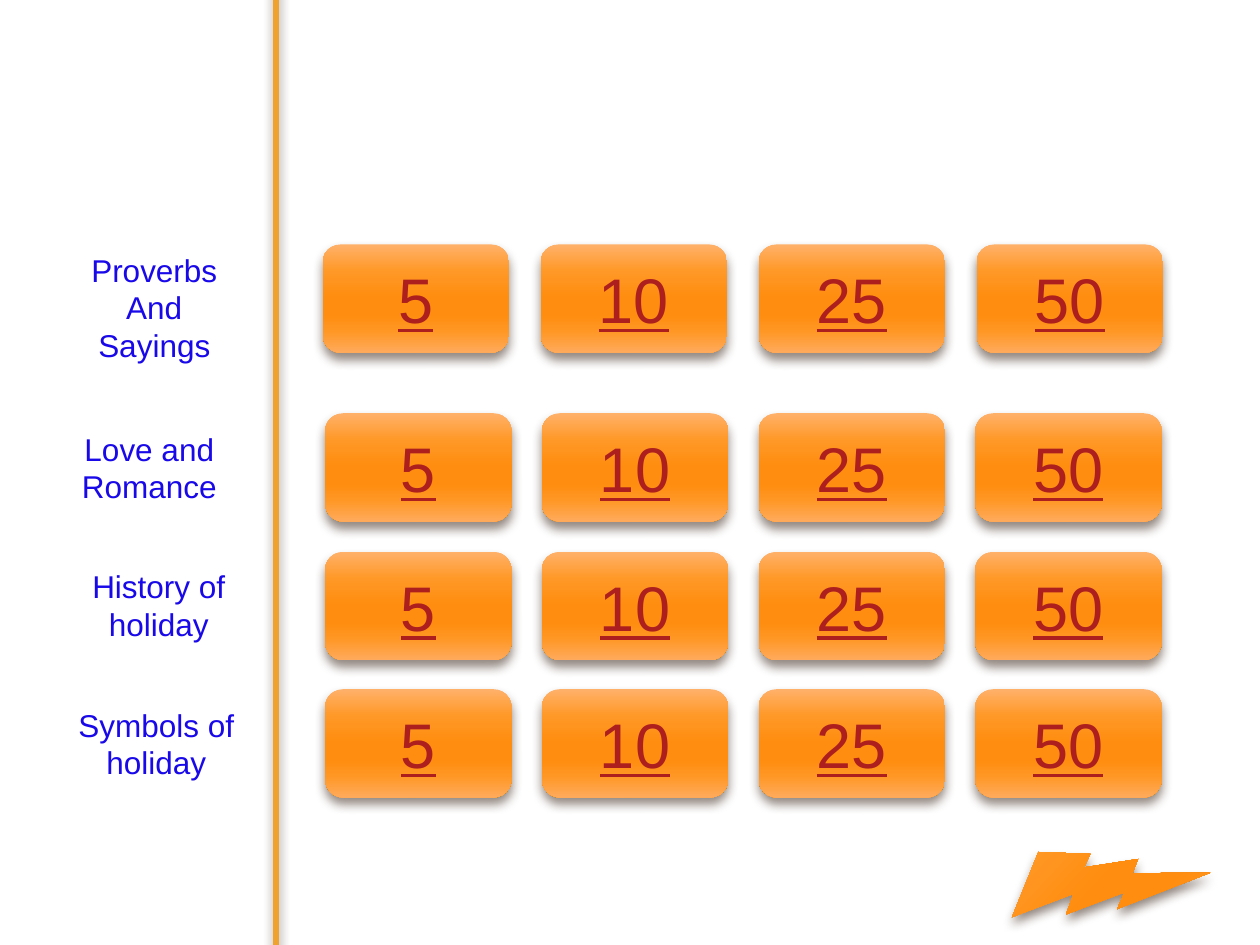
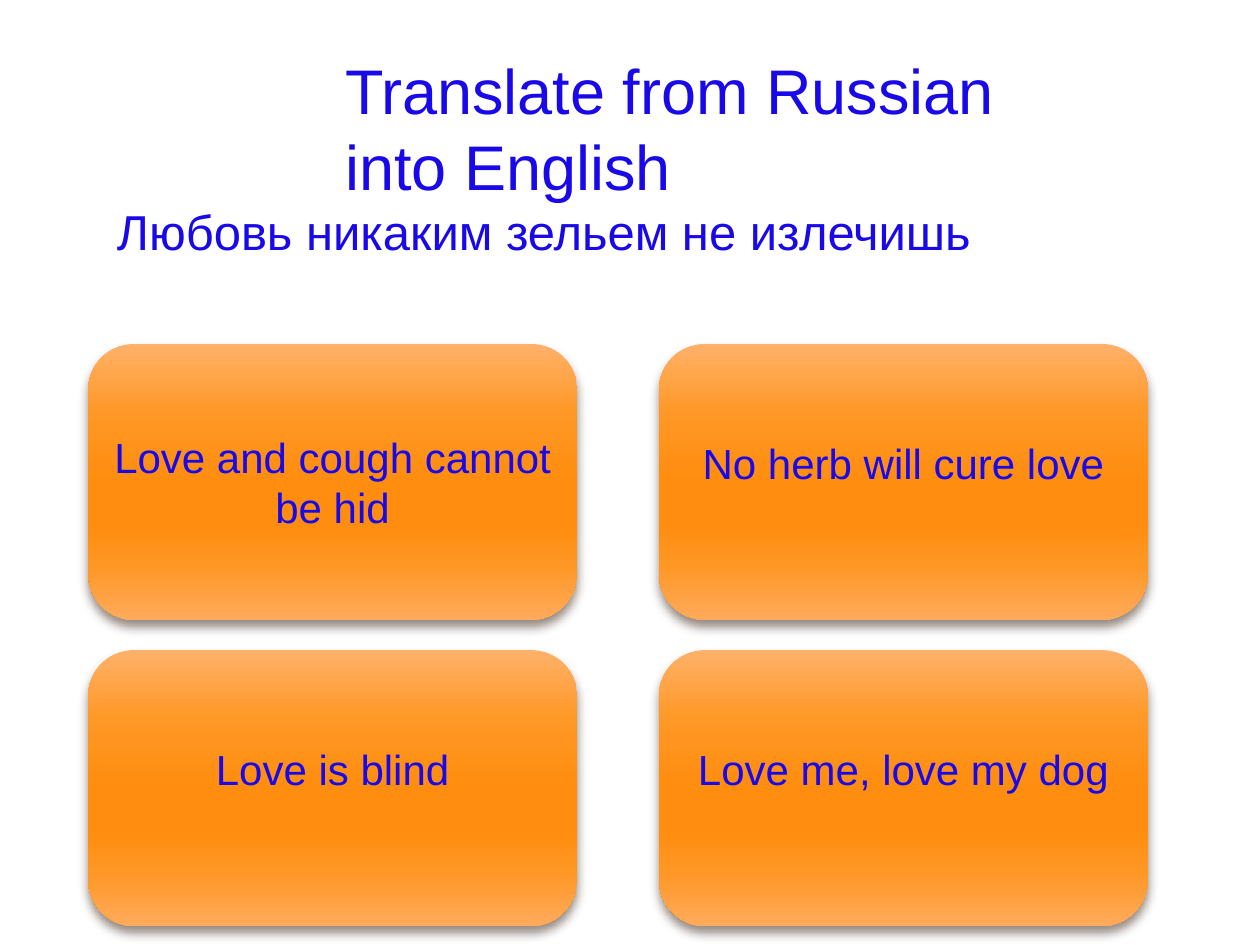
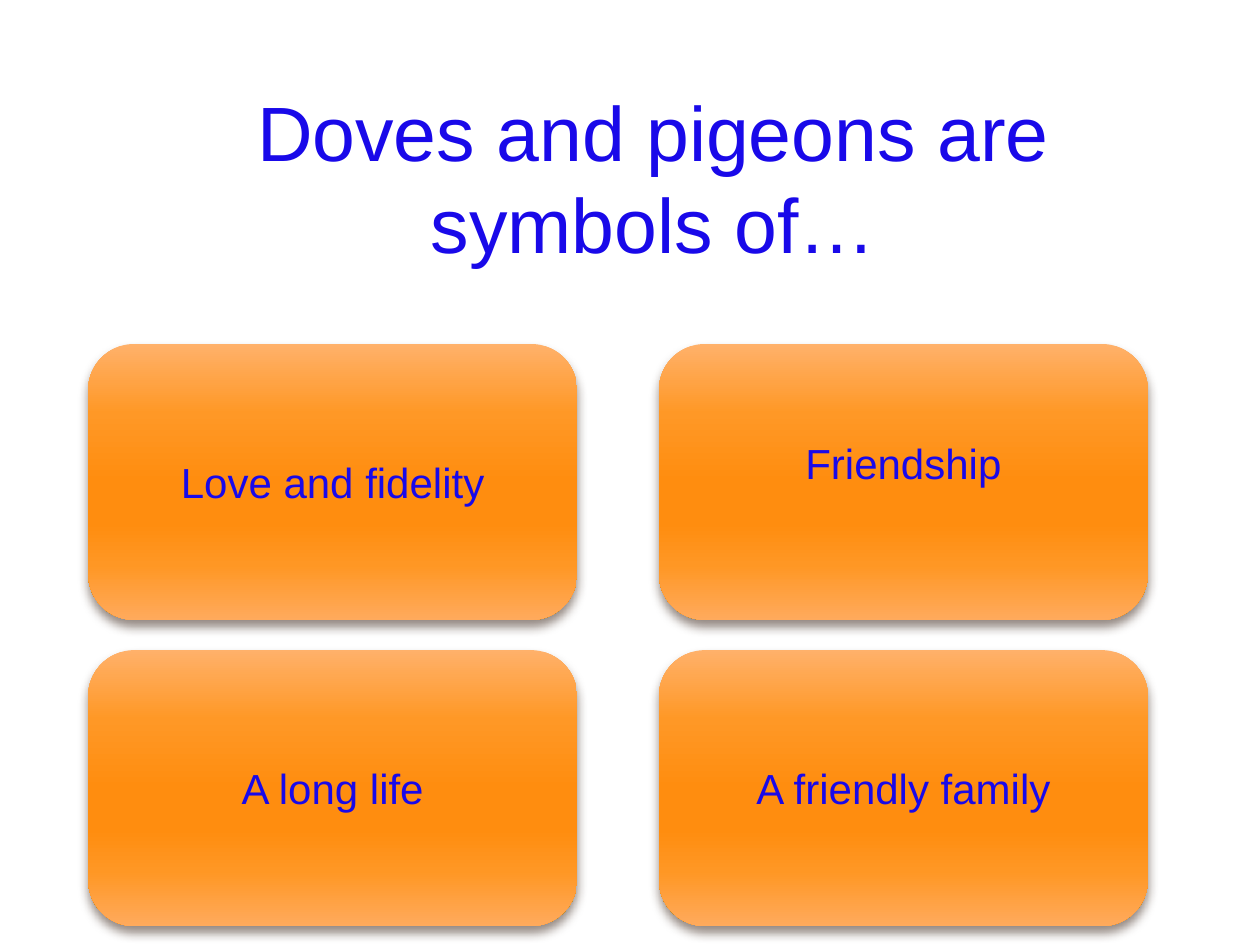
from dataclasses import dataclass

from lxml import etree
from pptx import Presentation
from pptx.dml.color import RGBColor
from pptx.enum.shapes import MSO_CONNECTOR, MSO_SHAPE
from pptx.enum.text import MSO_ANCHOR, MSO_AUTO_SIZE, PP_ALIGN
from pptx.oxml.ns import qn
from pptx.util import Inches, Pt

ROUND_RECT = MSO_SHAPE.ROUNDED_RECTANGLE
LIGHTNING = MSO_SHAPE.LIGHTNING_BOLT
STRAIGHT = MSO_CONNECTOR.STRAIGHT
TOP, MIDDLE = MSO_ANCHOR.TOP, MSO_ANCHOR.MIDDLE
LEFT, CENTER = PP_ALIGN.LEFT, PP_ALIGN.CENTER
NO_AUTOFIT = MSO_AUTO_SIZE.NONE

FONT = "Arial"
BLUE, RED, AMBER, SHADOW = "1909E9", "AD1F1F", "F0A22E", "4E3B30"
GLOSS = [(0, "FFB16A"), (25, "FF9826"), (50, "FF8D0F"),
         (65, "FF8D0F"), (80, "FF9724"), (100, "FFAA5C")]
TITLE_ONLY, BLANK = 5, 6

POINTS = ["5", "10", "25", "50"]
BUTTON_W, BUTTON_H = 1.48, 0.86
CARD_W, CARD_H = 3.88, 2.19
CARD_LEFT, CARD_TOP = 0.7, 2.73
CARD_STEP_X, CARD_STEP_Y = 4.53, 2.43
LINE_BELOW = 0.3  # height of one 18 pt line


@dataclass
class Box:
    left: float
    top: float
    width: float
    height: float

    def lengths(self) -> list:
        return [Inches(v) for v in (self.left, self.top, self.width, self.height)]


@dataclass
class Category:
    lines: str
    label: Box
    first_button: float
    button_top: float
    step: float = 1.72


@dataclass
class Answer:
    text: str
    raised: bool = False


CATEGORIES = [
    Category("Proverbs\nAnd\nSayings", Box(0.51, 1.94, 1.43, 1.01), 2.56, 1.94, 1.73),
    Category("Love and\nRomance", Box(0.47, 3.36, 1.43, 1.01), 2.58, 3.28),
    Category("History of\nholiday", Box(0.47, 4.45, 1.58, 0.71), 2.58, 4.38),
    Category("Symbols of\nholiday", Box(0.39, 5.55, 1.7, 1.01), 2.58, 5.47),
]
PROVERB_ANSWERS = [
    Answer("Love and cough cannot be hid"),
    Answer("No herb will cure love", True),
    Answer("Love is blind", True),
    Answer("Love me, love my dog", True),
]
DOVE_ANSWERS = [
    Answer("Love and fidelity"),
    Answer("Friendship", True),
    Answer("A long life"),
    Answer("A friendly family"),
]


def rgb(color: str) -> RGBColor:
    return RGBColor.from_string(color)


def add_color(parent, color: str):
    return etree.SubElement(parent, qn("a:srgbClr"), val=color)


def add_shadow(effects) -> None:
    shadow = etree.SubElement(effects, qn("a:outerShdw"), blurRad=str(Pt(6)),
                              dist=str(Pt(4)), dir="5400000", rotWithShape="0")
    etree.SubElement(add_color(shadow, SHADOW), qn("a:alpha"), val="60000")


def set_text(sp, text: str, size: int, color: str = BLUE, align=CENTER,
             anchor=TOP, underline: bool = False) -> None:
    tf = sp.text_frame
    tf.text = text
    tf.word_wrap = True
    tf.auto_size = NO_AUTOFIT
    tf.vertical_anchor = anchor
    for p in tf.paragraphs:
        p.alignment = align
        for r in p.runs:
            r.font.name = FONT
            r.font.size = Pt(size)
            r.font.color.rgb = rgb(color)
            if underline:
                r.font.underline = True


def add_glossy(slide, kind, box: Box):
    """Add a borderless shape with the orange gradient and soft shadow."""
    sp = slide.shapes.add_shape(kind, *box.lengths())
    sp.line.fill.background()
    sp.fill.gradient()
    sp.fill.gradient_angle = 270
    stops = sp.element.spPr.find(".//" + qn("a:gsLst"))
    stops.clear()
    for position, color in GLOSS:
        stop = etree.SubElement(stops, qn("a:gs"), pos=str(position * 1000))
        add_color(stop, color)
    sp.shadow.inherit = False
    add_shadow(sp.element.spPr.find(qn("a:effectLst")))
    return sp


def add_text(slide, box: Box, text: str, size: int, align=CENTER) -> None:
    sp = slide.shapes.add_textbox(*box.lengths())
    set_text(sp, text, size, align=align)


def add_divider(slide) -> None:
    x = Inches(2.19)
    line = slide.shapes.add_connector(STRAIGHT, x, Inches(-0.39), x, Inches(7.5))
    line.line.color.rgb = rgb(AMBER)
    line.line.width = Pt(3)
    add_shadow(etree.SubElement(line.element.spPr, qn("a:effectLst")))


def build_board(prs) -> None:
    slide = prs.slides.add_slide(prs.slide_layouts[BLANK])
    for category in CATEGORIES:
        add_text(slide, category.label, category.lines, 18)
        for i, points in enumerate(POINTS):
            left = category.first_button + i * category.step
            box = Box(left, category.button_top, BUTTON_W, BUTTON_H)
            button = add_glossy(slide, ROUND_RECT, box)
            set_text(button, points, 36, RED, anchor=MIDDLE, underline=True)
    add_divider(slide)
    add_glossy(slide, LIGHTNING, Box(8.08, 6.48, 1.33, 1.11)).rotation = 313


def build_question(prs, title: str, box: Box, size: int, align,
                   answers: list[Answer]):
    """Add a slide with a title and a two-by-two grid of answer cards."""
    slide = prs.slides.add_slide(prs.slide_layouts[TITLE_ONLY])
    heading = slide.shapes.title
    heading.left, heading.top, heading.width, heading.height = box.lengths()
    set_text(heading, title, size, align=align)
    for i, answer in enumerate(answers):
        row, column = divmod(i, 2)
        card = add_glossy(slide, ROUND_RECT, Box(
            CARD_LEFT + column * CARD_STEP_X, CARD_TOP + row * CARD_STEP_Y,
            CARD_W, CARD_H))
        set_text(card, answer.text, 24, anchor=MIDDLE)
        if answer.raised:
            card.text_frame.margin_bottom = Inches(0.05 + LINE_BELOW)
    return slide


def main() -> None:
    prs = Presentation()
    prs.slide_width, prs.slide_height = Inches(10), Inches(7.5)
    build_board(prs)
    slide = build_question(prs, "Translate from Russian into English",
                           Box(2.64, 0.36, 5.55, 0.71), 36, LEFT, PROVERB_ANSWERS)
    add_text(slide, Box(0.83, 1.55, 8.48, 0.57),
             "Любовь никаким зельем не излечишь", 28, LEFT)
    build_question(prs, "Doves and pigeons are symbols of…",
                   Box(1.72, 0.62, 6.93, 0.84), 44, CENTER, DOVE_ANSWERS)
    prs.save("out.pptx")


if __name__ == "__main__":
    main()
